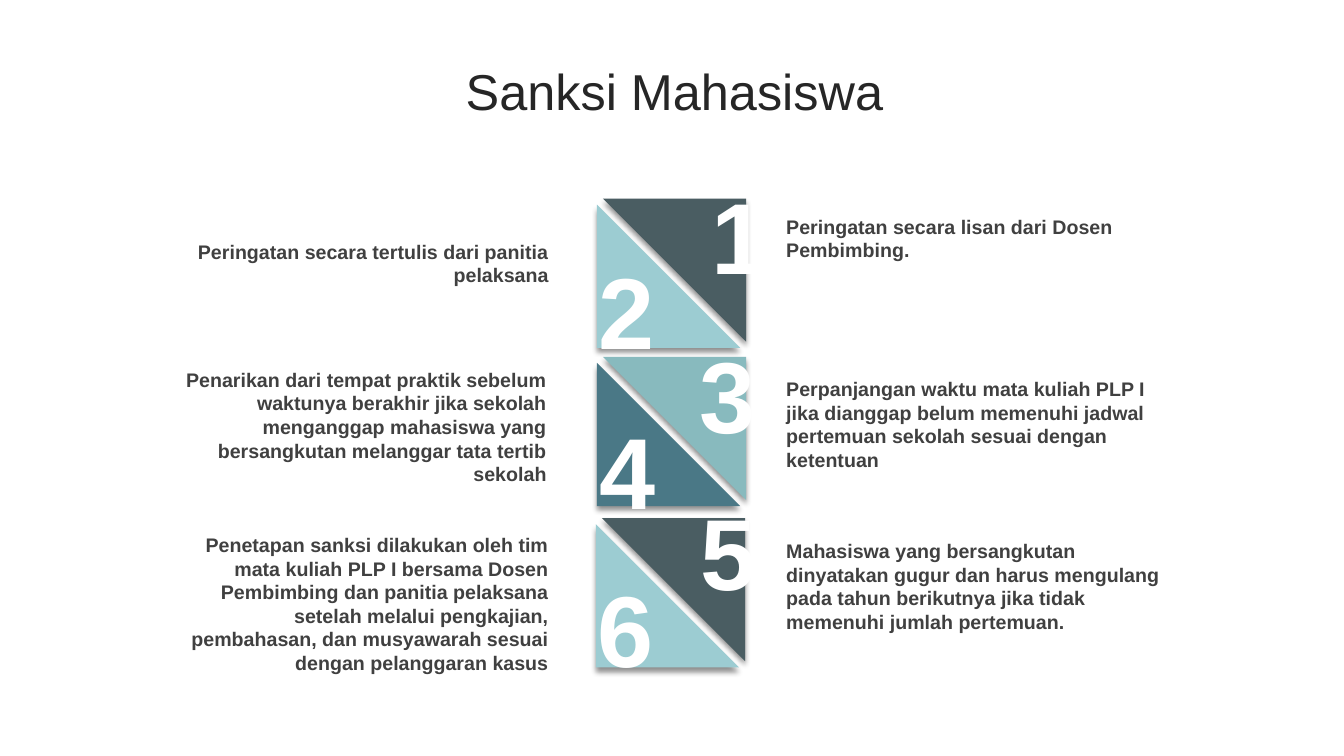
import pptx
import pptx.util
import pptx.dml.color
import pptx.enum.shapes
import pptx.enum.text
import pptx.oxml
import pptx.oxml.ns

Inches = pptx.util.Inches
ALIGN = pptx.enum.text.PP_ALIGN
ANCHOR = pptx.enum.text.MSO_ANCHOR

SHADOW = (
    f'<a:effectLst {pptx.oxml.ns.nsdecls("a")}>'
    '<a:outerShdw blurRad="50800" dist="38100" dir="5400000" algn="t" rotWithShape="0">'
    '<a:srgbClr val="000000"><a:alpha val="43000"/></a:srgbClr>'
    '</a:outerShdw></a:effectLst>'
)


def rgb(value):
    return pptx.dml.color.RGBColor.from_string(value)


def write(sp, text, size, color, align, bold=True):
    tf = sp.text_frame
    tf.word_wrap = True
    tf.text = text
    p = tf.paragraphs[0]
    p.alignment = align
    font = p.runs[0].font
    font.name = "Arial"
    font.size = pptx.util.Pt(size)
    font.bold = bold
    font.color.rgb = rgb(color)


prs = pptx.Presentation()
prs.slide_width = Inches(13.33)
prs.slide_height = Inches(7.5)
s = prs.slides.add_slide(prs.slide_layouts[5])

title = s.shapes.title
title.left, title.top = Inches(0.36), Inches(0.54)
title.width, title.height = Inches(12.66), Inches(0.79)
write(title, "Sanksi Mahasiswa", 36, "262626", ALIGN.CENTER, bold=False)
title.text_frame.vertical_anchor = ANCHOR.MIDDLE
title.text_frame.paragraphs[0].line_spacing = 0.9
title.text_frame.paragraphs[0].space_before = pptx.util.Pt(10)

# Each square: left, top, lower-left colour, upper-right colour
squares = [
    (5.92, 1.97, "9CCCD2", "4A5D62"),
    (5.92, 3.54, "4A7886", "88BABE"),
    (5.91, 5.14, "9CCCD2", "4A5D62"),
]
GAP = 0.06
for left, top, lower, upper in squares:
    for x, y, color, rotation in [(left, top + GAP, lower, 0), (left + GAP, top, upper, 180)]:
        sp = s.shapes.add_shape(
            pptx.enum.shapes.MSO_SHAPE.RIGHT_TRIANGLE,
            Inches(x), Inches(y), Inches(1.42), Inches(1.42))
        sp.rotation = rotation
        sp.fill.solid()
        sp.fill.fore_color.rgb = rgb(color)
        sp.line.fill.background()
        sp._element.spPr.append(pptx.oxml.parse_xml(SHADOW))

numbers = [(6.94, 1.67), (5.82, 2.42), (6.82, 3.25), (5.83, 4.01), (6.83, 4.81), (5.81, 5.57)]
for number, (left, top) in enumerate(numbers, 1):
    sp = s.shapes.add_textbox(Inches(left), Inches(top), Inches(0.67), Inches(1.31))
    write(sp, str(number), 72, "FFFFFF", ALIGN.CENTER)
    sp.text_frame.margin_left = sp.text_frame.margin_right = Inches(0.12)

sanctions = [
    (7.7, 2.08, 4.04, 0.57, ALIGN.LEFT, "Peringatan secara lisan dari Dosen Pembimbing."),
    (1.53, 2.33, 4.01, 0.57, ALIGN.RIGHT, "Peringatan secara tertulis dari panitia pelaksana"),
    (7.7, 3.69, 4.04, 1.04, ALIGN.LEFT,
     "Perpanjangan waktu mata kuliah PLP I jika dianggap belum memenuhi jadwal "
     "pertemuan sekolah sesuai dengan ketentuan"),
    (1.51, 3.6, 4.01, 1.28, ALIGN.RIGHT,
     "Penarikan dari tempat praktik sebelum waktunya berakhir jika sekolah menganggap "
     "mahasiswa yang bersangkutan melanggar tata tertib sekolah"),
    (7.7, 5.3, 4.04, 1.04, ALIGN.LEFT,
     "Mahasiswa yang bersangkutan dinyatakan gugur dan harus mengulang pada tahun "
     "berikutnya jika tidak memenuhi jumlah pertemuan."),
    (1.53, 5.24, 4.01, 1.51, ALIGN.RIGHT,
     "Penetapan sanksi dilakukan oleh tim mata kuliah PLP I bersama Dosen Pembimbing "
     "dan panitia pelaksana setelah melalui pengkajian, pembahasan, dan musyawarah "
     "sesuai dengan pelanggaran kasus"),
]
for left, top, width, height, align, text in sanctions:
    sp = s.shapes.add_textbox(Inches(left), Inches(top), Inches(width), Inches(height))
    write(sp, text, 14, "404040", align)

prs.save("out.pptx")
